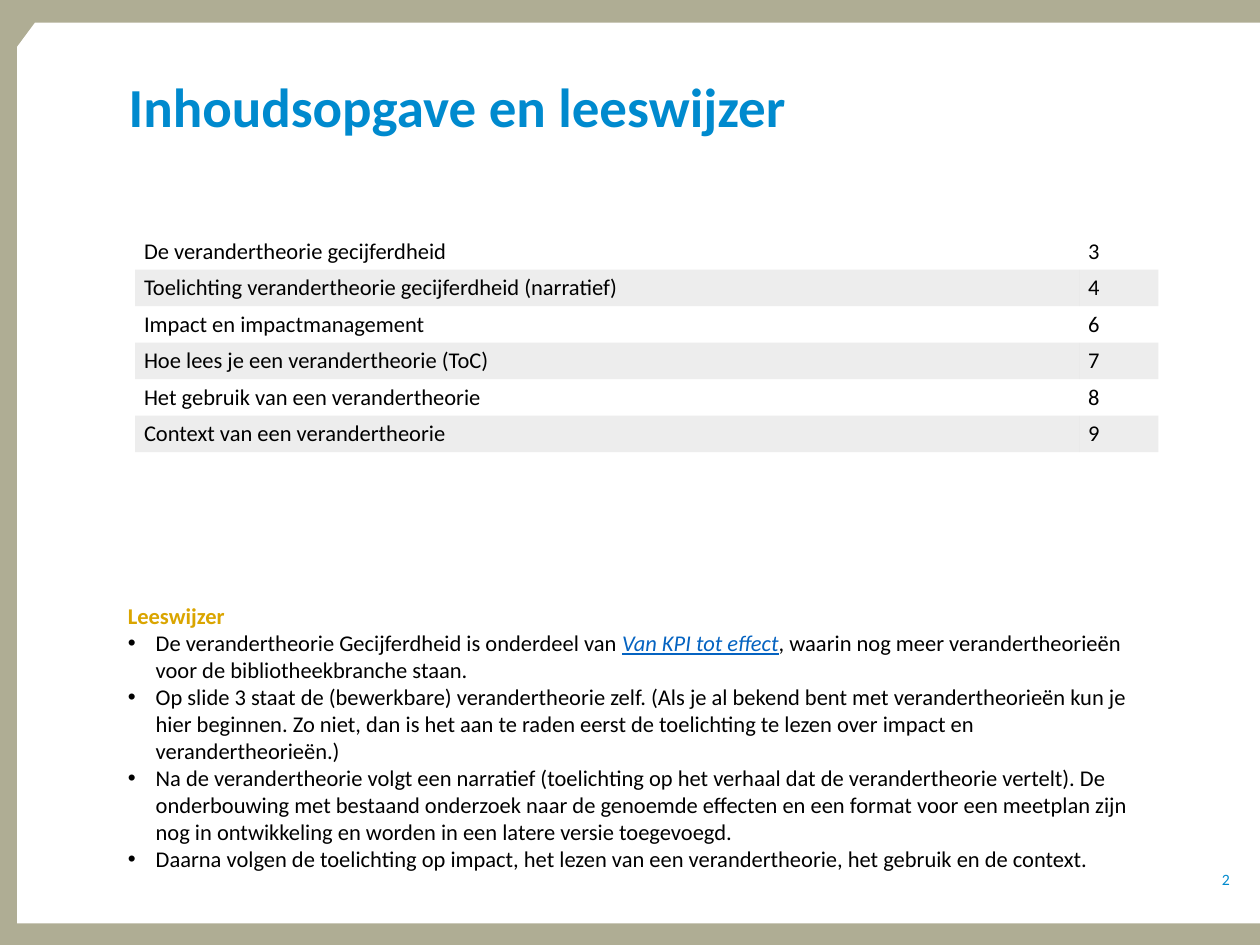
"""Build the contents and reading guide slide."""
from lxml.etree import SubElement
from pptx import Presentation
from pptx.dml.color import RGBColor as RGB
from pptx.enum.shapes import MSO_SHAPE as Shape
from pptx.enum.text import MSO_ANCHOR as Anchor, MSO_AUTO_SIZE as Fit, PP_ALIGN as Align
from pptx.oxml.ns import qn
from pptx.util import Inches, Pt

TITLE = "Inhoudsopgave en leeswijzer"
TOC = [
    ("De verandertheorie gecijferdheid", "3"),
    ("Toelichting verandertheorie gecijferdheid (narratief)", "4"),
    ("Impact en impactmanagement", "6"),
    ("Hoe lees je een verandertheorie (ToC)", "7"),
    ("Het gebruik van een verandertheorie", "8"),
    ("Context van een verandertheorie", "9"),
    ("", ""),
]
HEAD = "Leeswijzer"
LINK = "Van KPI tot effect"
GUIDE = [
    ["De verandertheorie Gecijferdheid is onderdeel van ", LINK,
     ", waarin nog meer verandertheorieën voor de bibliotheekbranche staan."],
    ["Op slide 3 staat de (bewerkbare) verandertheorie zelf. (Als je al bekend bent met "
     "verandertheorieën kun je hier beginnen. Zo niet, dan is het aan te raden eerst de "
     "toelichting te lezen over impact en verandertheorieën.)"],
    ["Na de verandertheorie volgt een narratief (toelichting op het verhaal dat de "
     "verandertheorie vertelt). De onderbouwing met bestaand onderzoek naar de genoemde "
     "effecten en een format voor een meetplan zijn nog in ontwikkeling en worden in een "
     "latere versie toegevoegd."],
    ["Daarna volgen de toelichting op impact, het lezen van een verandertheorie, het gebruik "
     "en de context."],
]
PAGE = "2"
COLORS = {"frame": "AFAD94", "paper": "FFFFFF", "blue": "008ACE", "gold": "DAA500",
          "text": "000000", "link": "0563C1", "band": "A5A5A5"}
SHEET = [(0.39, 0.25), (14, 0.25), (14, 10.26), (0.19, 10.26), (0.19, 0.52)]
COLS = [10.49, 0.88]
ROW = 0.405
PLAIN = "{2D5ABB26-0587-4C30-8999-92F81FD0307C}"


def hue(name):
    return RGB.from_string(COLORS[name])


def style(para, size, color, bold=False):
    font = para.font
    font.name, font.size, font.bold = "Calibri", Pt(size), bold
    font.color.rgb = hue(color)


def place(shape, *box):
    shape.left, shape.top, shape.width, shape.height = map(Inches, box)


def trim(frame, anchor):
    frame.margin_left = frame.margin_right = frame.margin_top = frame.margin_bottom = 0
    frame.vertical_anchor = anchor


def bullet(para, char=None):
    props = para._p.get_or_add_pPr()
    indent = Inches(0.31) if char else 0
    props.set("marL", str(indent))
    props.set("indent", str(-indent))
    if char:
        SubElement(props, qn("a:buFont"), typeface="Arial")
        SubElement(props, qn("a:buChar"), char=char)
    else:
        SubElement(props, qn("a:buNone"))


def add_sheet(slide):
    start, *rest = [(Inches(x), Inches(y)) for x, y in SHEET]
    pen = slide.shapes.build_freeform(*start)
    pen.add_line_segments(rest, close=True)
    sheet = pen.convert_to_shape()
    sheet.shadow.inherit = False
    sheet.fill.solid()
    sheet.fill.fore_color.rgb = hue("paper")
    sheet.line.fill.background()


def add_page(slide):
    mark = slide.shapes.add_shape(Shape.OVAL, *map(Inches, (13.41, 9.49, 0.42, 0.56)))
    mark.shadow.inherit = False
    mark.fill.background()
    mark.line.fill.background()
    frame = mark.text_frame
    trim(frame, Anchor.MIDDLE)
    frame.word_wrap = False
    frame.text = PAGE
    para = frame.paragraphs[0]
    para.alignment = Align.CENTER
    style(para, 12.6, "blue")


def add_title(slide):
    title = slide.shapes.title
    place(title, 1.43, 0.95, 10.71, 1.01)
    frame = title.text_frame
    frame.text = TITLE
    frame.auto_size = Fit.NONE
    trim(frame, Anchor.TOP)
    para = frame.paragraphs[0]
    para.alignment, para.line_spacing = Align.LEFT, 0.8
    style(para, 44, "blue", True)


def add_toc(slide):
    box = map(Inches, (1.5, 2.59, sum(COLS), ROW * len(TOC)))
    table = slide.shapes.add_table(len(TOC), len(COLS), *box).table
    table.first_row = table.horz_banding = False
    table._tbl.tblPr.find(qn("a:tableStyleId")).text = PLAIN
    for col, width in zip(table.columns, COLS):
        col.width = Inches(width)
    for r, row in enumerate(TOC):
        for c, text in enumerate(row):
            cell = table.cell(r, c)
            cell.text = text
            style(cell.text_frame.paragraphs[0], 18, "text")
            if r % 2:
                cell.fill.solid()
                cell.fill.fore_color.rgb = hue("band")
                tone = cell._tc.tcPr.find(".//" + qn("a:srgbClr"))
                SubElement(tone, qn("a:alpha"), val="20000")
            else:
                cell.fill.background()


def add_guide(slide):
    body = slide.placeholders[1]
    place(body, 1.32, 6.64, 11.37, 3.79)
    frame = body.text_frame
    frame.auto_size, frame.vertical_anchor = Fit.NONE, Anchor.TOP
    frame.text = HEAD
    head = frame.paragraphs[0]
    head.space_before = Pt(0)
    bullet(head)
    style(head, 18, "gold", True)
    for parts in GUIDE:
        para = frame.add_paragraph()
        para.space_before = Pt(0)
        bullet(para, "•")
        style(para, 18, "text")
        for part in parts:
            run = para.add_run()
            run.text = part
            if part == LINK:
                run.font.italic = run.font.underline = True
                run.font.color.rgb = hue("link")


def main():
    deck = Presentation()
    deck.slide_width, deck.slide_height = Inches(14), Inches(10.5)
    slide = deck.slides.add_slide(deck.slide_layouts[1])
    back = slide.background.fill
    back.solid()
    back.fore_color.rgb = hue("frame")
    add_sheet(slide)
    tree = slide.shapes._spTree
    tree.insert(2, tree[-1])
    add_page(slide)
    add_title(slide)
    add_toc(slide)
    add_guide(slide)
    deck.save("out.pptx")


if __name__ == "__main__":
    main()
